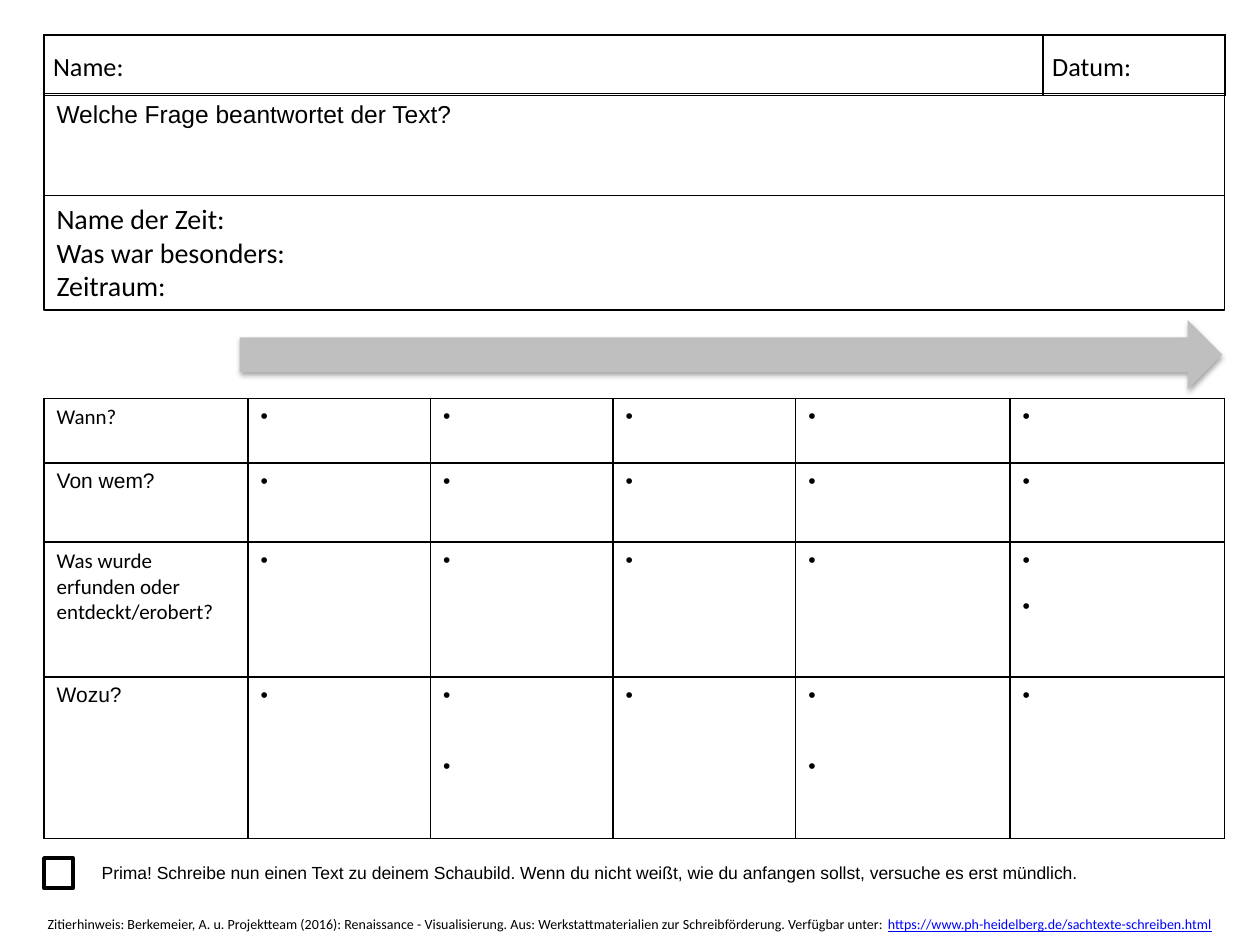
from lxml.etree import SubElement as Sub
from pptx import Presentation
from pptx.dml.color import RGBColor
from pptx.enum.shapes import MSO_SHAPE as Kind
from pptx.enum.text import MSO_ANCHOR as Anchor
from pptx.oxml.ns import qn
from pptx.util import Cm, Pt

BLACK, GREY, BLUE = "000000", "BFBFBF", "0000FF"
LEFT, WIDE = 0.89, 23.8
ARIAL = {"name": "Arial", "size": Pt(12)}
CALIBRI = {"name": "Calibri", "size": Pt(12)}

ROWS = [
    ("Wann?", 1.3, CALIBRI),
    ("Von wem?", 1.6, ARIAL),
    ("Was wurde erfunden oder entdeckt/erobert?", 2.72, CALIBRI),
    ("Wozu?", 3.25, ARIAL),
]
COLS = [4.11, 3.68, 3.68, 3.68, 4.32, 4.32]
# (row, column) of cells with a second bullet, and the gap above it
SECOND = {(2, 5): 13, (3, 2): 27, (3, 4): 27}


def tint(code):
    return RGBColor.from_string(code)


def style(font, form, color=BLACK):
    for key, value in form.items():
        setattr(font, key, value)
    font.color.rgb = tint(color)


def write(para, text, form, color=BLACK):
    run = para.add_run()
    run.text = text
    style(run.font, form, color)


def fill_text(frame, lines, form):
    frame.word_wrap = True
    for i, line in enumerate(lines):
        para = frame.add_paragraph() if i else frame.paragraphs[0]
        write(para, line, form)


def add_box(slide, box, weight):
    shape = slide.shapes.add_shape(Kind.RECTANGLE, *map(Cm, box))
    shape.shadow.inherit = False
    shape.fill.background()
    shape.line.color.rgb = tint(BLACK)
    shape.line.width = Pt(weight)
    return shape


def add_panel(slide, box, lines, form):
    frame = add_box(slide, box, 0.75).text_frame
    frame.vertical_anchor = Anchor.TOP
    fill_text(frame, lines, form)
    for para in frame.paragraphs:
        para.alignment = 1


def add_note(slide, box):
    return slide.shapes.add_textbox(*map(Cm, box)).text_frame


def rule_cell(cell):
    """Clear the fill and draw a thin black line on all four sides."""
    cell.fill.background()
    props = cell._tc.get_or_add_tcPr()
    for i, side in enumerate("LRTB"):
        line = Sub(props, qn(f"a:ln{side}"), w=str(Pt(1)))
        Sub(Sub(line, qn("a:solidFill")), qn("a:srgbClr"), val=BLACK)
        props.insert(i, line)


def add_grid(slide, left, top, cols, rows):
    size = map(Cm, (left, top, sum(cols), sum(rows)))
    grid = slide.shapes.add_table(len(rows), len(cols), *size).table
    grid.first_row = grid.horz_banding = False
    for col, width in zip(grid.columns, cols):
        col.width = Cm(width)
    for row, height in zip(grid.rows, rows):
        row.height = Cm(height)
    for cell in grid.iter_cells():
        rule_cell(cell)
    return grid


def add_bullet(para, gap=0):
    props = para._p.get_or_add_pPr()
    props.set("marL", str(Cm(0.48)))
    props.set("indent", str(-Cm(0.48)))
    Sub(props, qn("a:buFont"), typeface="Arial")
    Sub(props, qn("a:buChar"), char="•")
    if gap:
        para.space_before = Pt(gap)
    write(para, " ", ARIAL)


def add_header(slide, left, top):
    grid = add_grid(slide, left, top, [20.14, 1.35, 2.31], [1.22])
    grid.cell(0, 1).merge(grid.cell(0, 2))
    form = {"name": "Calibri", "size": Pt(15)}
    layout = {"vertical_anchor": Anchor.MIDDLE, "margin_left": Cm(0.18),
              "margin_right": Cm(0.18), "margin_top": 0, "margin_bottom": 0}
    for i, text in enumerate(["Name:", "Datum:"]):
        cell = grid.cell(0, i)
        for key, value in layout.items():
            setattr(cell, key, value)
        para = cell.text_frame.paragraphs[0]
        para.line_spacing = 1.15
        write(para, text, form)


def add_events(slide, left, top):
    grid = add_grid(slide, left, top, COLS, [row[1] for row in ROWS])
    for r, (label, _, form) in enumerate(ROWS):
        write(grid.cell(r, 0).text_frame.paragraphs[0], label, form)
        for c in range(1, len(COLS)):
            frame = grid.cell(r, c).text_frame
            add_bullet(frame.paragraphs[0])
            if (r, c) in SECOND:
                add_bullet(frame.add_paragraph(), SECOND[r, c])


def add_arrow(slide, box):
    arrow = slide.shapes.add_shape(Kind.RIGHT_ARROW, *map(Cm, box))
    arrow.shadow.inherit = False
    arrow.fill.solid()
    arrow.fill.fore_color.rgb = tint(GREY)
    arrow.line.fill.background()
    effects = arrow._element.spPr.find(qn("a:effectLst"))
    shade = Sub(effects, qn("a:outerShdw"), blurRad=str(Pt(3.1)),
                dist=str(Pt(1.8)), dir="5400000", rotWithShape="0")
    color = Sub(shade, qn("a:srgbClr"), val=BLACK)
    Sub(color, qn("a:alpha"), val="35000")


def add_check(slide, left, top):
    add_box(slide, (left, top, 0.58, 0.61), 2.25)
    fill_text(add_note(slide, (left + 0.91, top - 0.05, 23.3, 0.69)), [
        "Prima! Schreibe nun einen Text zu deinem Schaubild. Wenn du nicht "
        "weißt, wie du anfangen sollst, versuche es erst mündlich."
    ], {"name": "Arial", "size": Pt(10)})


def add_source(slide, box):
    form = {"name": "Calibri", "size": Pt(8)}
    frame = add_note(slide, box)
    fill_text(frame, [
        "Zitierhinweis: Berkemeier, A. u. Projektteam (2016): Renaissance - "
        "Visualisierung. Aus: Werkstattmaterialien zur Schreibförderung. "
        "Verfügbar unter: "
    ], form)
    write(frame.paragraphs[0],
          "https://www.ph-heidelberg.de/sachtexte-schreiben.html",
          {**form, "underline": True}, BLUE)


def main():
    deck = Presentation()
    deck.slide_width, deck.slide_height = Cm(25.4), Cm(19.05)
    slide = deck.slides.add_slide(deck.slide_layouts[6])
    add_panel(slide, (LEFT, 1.88, WIDE, 2.06),
              ["Welche Frage beantwortet der Text?"],
              {"name": "Arial", "size": Pt(14)})
    add_events(slide, LEFT, 8.03)
    add_header(slide, LEFT, 0.71)
    add_arrow(slide, (4.83, 6.45, 19.81, 1.4))
    add_check(slide, LEFT, 17.3)
    add_source(slide, (0.71, 18.34, 24.4, 0.61))
    add_panel(slide, (LEFT, 3.94, WIDE, 2.31),
              ["Name der Zeit:", "Was war besonders:", "Zeitraum:"],
              {"name": "Calibri", "size": Pt(16)})
    deck.save("out.pptx")


if __name__ == "__main__":
    main()
